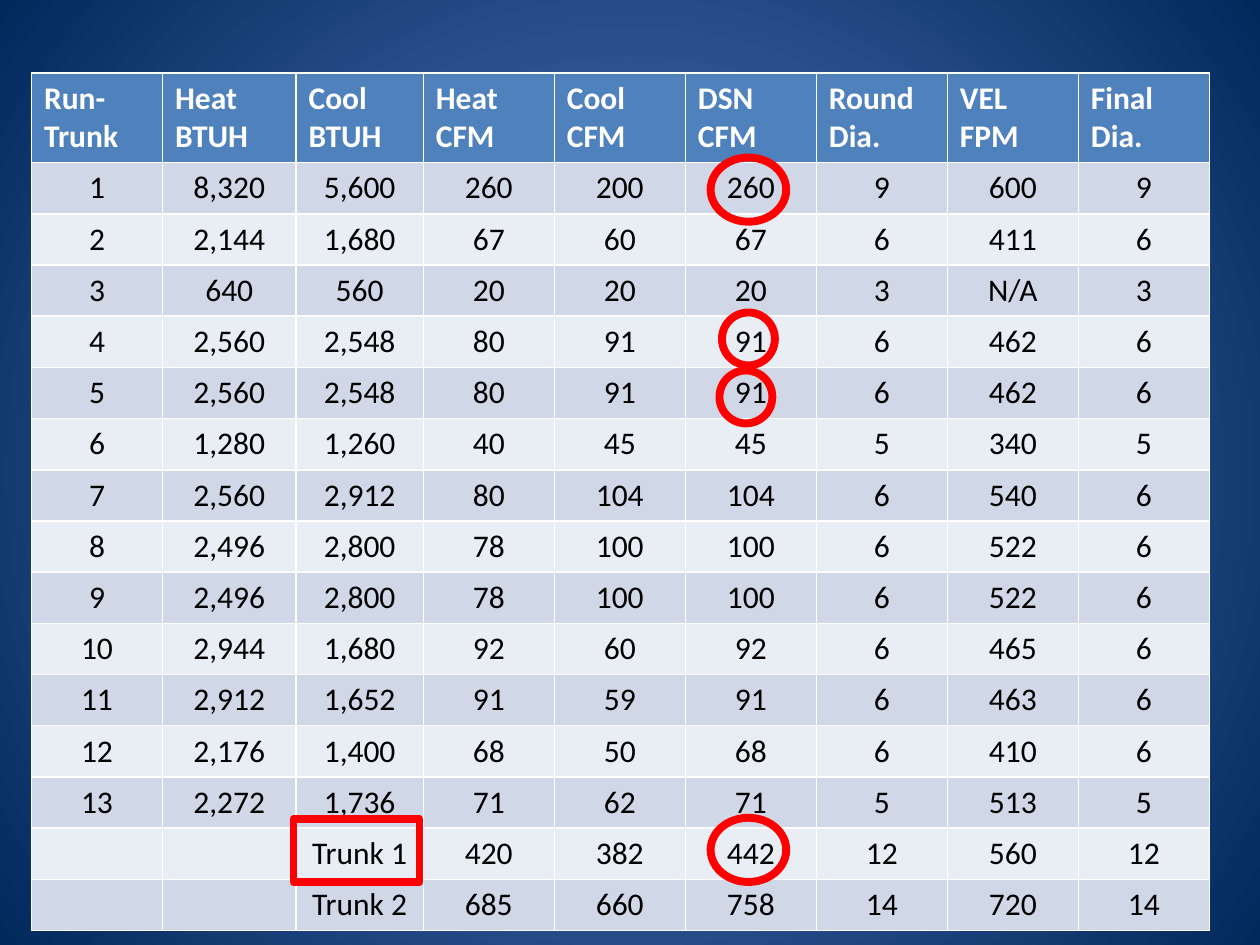
import pptx
import pptx.util
import pptx.dml.color
import pptx.enum.shapes
import pptx.enum.text
import pptx.oxml
import pptx.oxml.ns

Inches, Pt = pptx.util.Inches, pptx.util.Pt
SHAPE = pptx.enum.shapes.MSO_SHAPE
CENTER = pptx.enum.text.PP_ALIGN.CENTER
COLORS = {
    "glow": "5E7CC5", "navy": "00295C", "head": "4F81BD", "odd": "D0D8E8",
    "even": "E9EDF4", "white": "FFFFFF", "black": "000000", "mark": "FF0000",
}


def rgb(name):
    return pptx.dml.color.RGBColor.from_string(COLORS[name])


deck = pptx.Presentation()
deck.slide_width, deck.slide_height = Inches(10), Inches(7.5)
slide = deck.slides.add_slide(deck.slide_layouts[6])

# Background: radial gradient from the centre
back = slide.background.fill
back.gradient()
for stop, name in zip(back.gradient_stops, ("glow", "navy")):
    stop.color.rgb = rgb(name)
qn = pptx.oxml.ns.qn
grad = slide.element.find(".//" + qn("a:gradFill"))
grad.remove(grad.find(qn("a:lin")))
grad.append(pptx.oxml.parse_xml(
    f'<a:path {pptx.oxml.ns.nsdecls("a")} path="circle">'
    '<a:fillToRect l="50000" t="50000" r="50000" b="50000"/></a:path>'))

# Duct sizes by run and trunk
heads = ["Run-Trunk", "Heat BTUH", "Cool\nBTUH", "Heat\nCFM", "Cool\nCFM",
         "DSN\nCFM", "Round\nDia.", "VEL\nFPM", "Final\nDia."]
runs = """1|8,320|5,600|260|200|260|9|600|9
2|2,144|1,680|67|60|67|6|411|6
3|640|560|20|20|20|3|N/A|3
4|2,560|2,548|80|91|91|6|462|6
5|2,560|2,548|80|91|91|6|462|6
6|1,280|1,260|40|45|45|5|340|5
7|2,560|2,912|80|104|104|6|540|6
8|2,496|2,800|78|100|100|6|522|6
9|2,496|2,800|78|100|100|6|522|6
10|2,944|1,680|92|60|92|6|465|6
11|2,912|1,652|91|59|91|6|463|6
12|2,176|1,400|68|50|68|6|410|6
13|2,272|1,736|71|62|71|5|513|5
||Trunk 1|420|382|442|12|560|12
||Trunk 2|685|660|758|14|720|14"""
rows = [heads] + [line.split("|") for line in runs.splitlines()]
high, top = 6.8, 0.7
table = slide.shapes.add_table(len(rows), len(heads), Inches(0.25), Inches(0.58),
                               Inches(9.33), Inches(high)).table
for col, width in zip(table.columns, [1.04, 1.06, 1.01] + [1.04] * 6):
    col.width = Inches(width)

for r, row in enumerate(rows):
    table.rows[r].height = Inches(top if r == 0 else (high - top) / (len(rows) - 1))
    shade = "head" if r == 0 else "odd" if r % 2 else "even"
    for c, text in enumerate(row):
        cell = table.cell(r, c)
        cell.fill.solid()
        cell.fill.fore_color.rgb = rgb(shade)
        cell.text = text
        for para in cell.text_frame.paragraphs:
            para.font.name, para.font.size = "Calibri", Pt(18)
            para.font.bold = r == 0
            para.font.color.rgb = rgb("black" if r else "white")
            if r:
                para.alignment = CENTER

# Red marks around key values
marks = [
    (SHAPE.OVAL, 5.64, 1.25, 0.6, 0.51),
    (SHAPE.OVAL, 5.73, 2.48, 0.42, 0.42),
    (SHAPE.OVAL, 5.71, 2.94, 0.42, 0.42),
    (SHAPE.OVAL, 5.64, 6.49, 0.6, 0.51),
    (SHAPE.RECTANGLE, 2.33, 6.5, 1, 0.5),
]
for kind, *box in marks:
    mark = slide.shapes.add_shape(kind, *map(Inches, box))
    mark.shadow.inherit = False
    mark.fill.background()
    mark.line.color.rgb = rgb("mark")
    mark.line.width = Pt(4.5)

deck.save("out.pptx")
